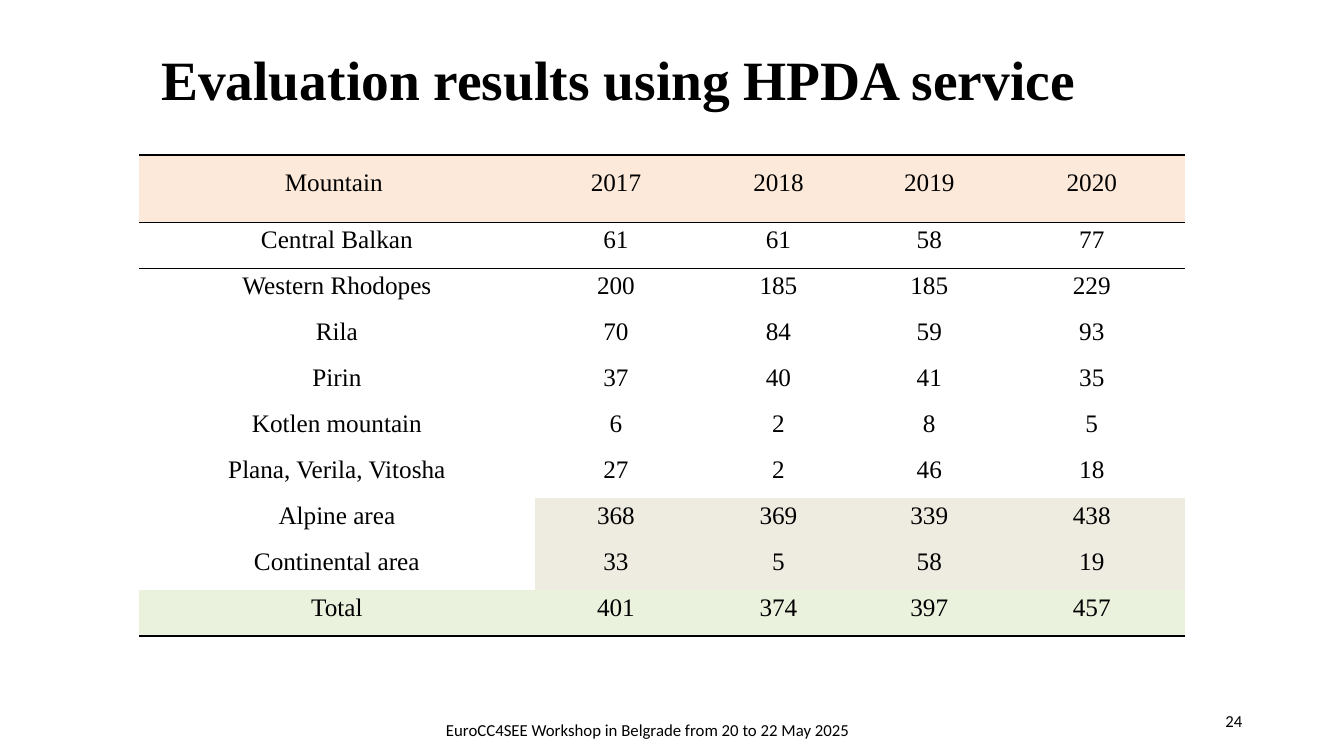
from dataclasses import dataclass

import pptx
import pptx.dml.color
import pptx.enum.text
import pptx.oxml
import pptx.oxml.ns
import pptx.util

ALIGN = pptx.enum.text.PP_ALIGN
MIDDLE = pptx.enum.text.MSO_ANCHOR.MIDDLE
PLAIN_STYLE = "{2D5ABB26-0587-4C30-8999-92F81FD0307C}"


@dataclass(frozen=True)
class Theme:
    ink: str = "000000"
    header: str = "FDE9D9"
    areas: str = "EEECE1"
    total: str = "EAF1DD"
    serif: str = "Times New Roman"
    sans: str = "Calibri"
    title_size: float = 39.6
    table_size: float = 18
    table_leading: float = 12
    note_size: float = 12
    heavy_rule: float = 1.5
    light_rule: float = 1


THEME = Theme()
SLIDE_WIDTH = pptx.util.Inches(13.33)
SLIDE_HEIGHT = pptx.util.Inches(7.5)
COLUMN_WEIGHTS = [3.92, 1.61, 1.61, 1.38, 1.84]
HEADER_SHARE = 0.14
COUNTS = [
    ("Mountain ", 2017, 2018, 2019, 2020),
    ("Central Balkan", 61, 61, 58, 77),
    ("Western Rhodopes", 200, 185, 185, 229),
    ("Rila", 70, 84, 59, 93),
    ("Pirin", 37, 40, 41, 35),
    ("Kotlen mountain", 6, 2, 8, 5),
    ("Plana, Verila, Vitosha", 27, 2, 46, 18),
    ("Alpine area", 368, 369, 339, 438),
    ("Continental area", 33, 5, 58, 19),
    ("Total", 401, 374, 397, 457),
]
TOTAL_ROW = len(COUNTS) - 1
AREA_ROWS = (TOTAL_ROW - 2, TOTAL_ROW - 1)


def percent_box(left, top, width, height):
    return (
        round(SLIDE_WIDTH * left / 100),
        round(SLIDE_HEIGHT * top / 100),
        round(SLIDE_WIDTH * width / 100),
        round(SLIDE_HEIGHT * height / 100),
    )


def write(frame, words, align, face, size, bold=False):
    paragraph = frame.paragraphs[0]
    paragraph.alignment = align
    run = paragraph.add_run()
    run.text = words
    run.font.name = face
    run.font.size = pptx.util.Pt(size)
    run.font.bold = bold
    run.font.color.rgb = pptx.dml.color.RGBColor.from_string(THEME.ink)
    return paragraph


def place_title(slide, box, words):
    title = slide.shapes.title
    title.left, title.top, title.width, title.height = box
    title.text_frame.vertical_anchor = MIDDLE
    title.text_frame.word_wrap = True
    heading = write(title.text_frame, words, ALIGN.CENTER, THEME.serif, THEME.title_size, True)
    heading.line_spacing = 0.9


def place_note(slide, box, words, align):
    frame = slide.shapes.add_textbox(*box).text_frame
    frame.word_wrap = True
    frame.vertical_anchor = MIDDLE
    write(frame, words, align, THEME.sans, THEME.note_size)


def add_rule(cell, edge, points):
    namespace = pptx.oxml.ns.nsdecls("a")
    cell._tc.get_or_add_tcPr().append(pptx.oxml.parse_xml(
        f'<a:{edge} {namespace} w="{pptx.util.Pt(points)}"><a:solidFill>'
        f'<a:srgbClr val="{THEME.ink}"/></a:solidFill></a:{edge}>'
    ))


def rule_row(cell, row):
    if row == 0:
        add_rule(cell, "lnT", THEME.heavy_rule)
        add_rule(cell, "lnB", THEME.light_rule)
    elif row == 1:
        add_rule(cell, "lnT", THEME.light_rule)
    elif row == TOTAL_ROW:
        add_rule(cell, "lnB", THEME.heavy_rule)


def cell_colour(row, column):
    if row == 0:
        return THEME.header
    if row == TOTAL_ROW:
        return THEME.total
    if row in AREA_ROWS and column > 0:
        return THEME.areas
    return None


def fill_cell(cell, row, column, words):
    cell.margin_left = cell.margin_right = pptx.util.Inches(0.05)
    cell.margin_top = cell.margin_bottom = 0
    cell.vertical_anchor = MIDDLE
    entry = write(cell.text_frame, words, ALIGN.CENTER, THEME.serif, THEME.table_size)
    entry.line_spacing = pptx.util.Pt(THEME.table_leading)
    rule_row(cell, row)
    colour = cell_colour(row, column)
    if colour:
        cell.fill.solid()
        cell.fill.fore_color.rgb = pptx.dml.color.RGBColor.from_string(colour)
    else:
        cell.fill.background()


def place_counts(slide, box):
    width, height = box[2:]
    counts = slide.shapes.add_table(len(COUNTS), len(COLUMN_WEIGHTS), *box).table
    counts.first_row = counts.horz_banding = False
    counts._tbl.tblPr.find(pptx.oxml.ns.qn("a:tableStyleId")).text = PLAIN_STYLE
    for column, weight in zip(counts.columns, COLUMN_WEIGHTS):
        column.width = round(width * weight / sum(COLUMN_WEIGHTS))
    header_height = round(height * HEADER_SHARE)
    for row, record in enumerate(COUNTS):
        counts.rows[row].height = (
            header_height if row == 0 else round((height - header_height) / TOTAL_ROW)
        )
        for column, value in enumerate(record):
            fill_cell(counts.cell(row, column), row, column, str(value))


def build_results_slide(deck):
    slide = deck.slides.add_slide(deck.slide_layouts[5])
    place_title(slide, percent_box(10, 4.27, 72, 13.33), "Evaluation results using HPDA service")
    place_note(slide, percent_box(70.67, 92.67, 22.5, 5.33), "24", ALIGN.RIGHT)
    place_note(
        slide,
        percent_box(15.3, 95.07, 65.8, 2.93),
        "EuroCC4SEE Workshop in Belgrade from 20 to 22 May 2025",
        ALIGN.CENTER,
    )
    place_counts(slide, percent_box(10.35, 20.5, 77.8, 63.7))


def main():
    deck = pptx.Presentation()
    deck.slide_width = SLIDE_WIDTH
    deck.slide_height = SLIDE_HEIGHT
    build_results_slide(deck)
    deck.save("out.pptx")


if __name__ == "__main__":
    main()
